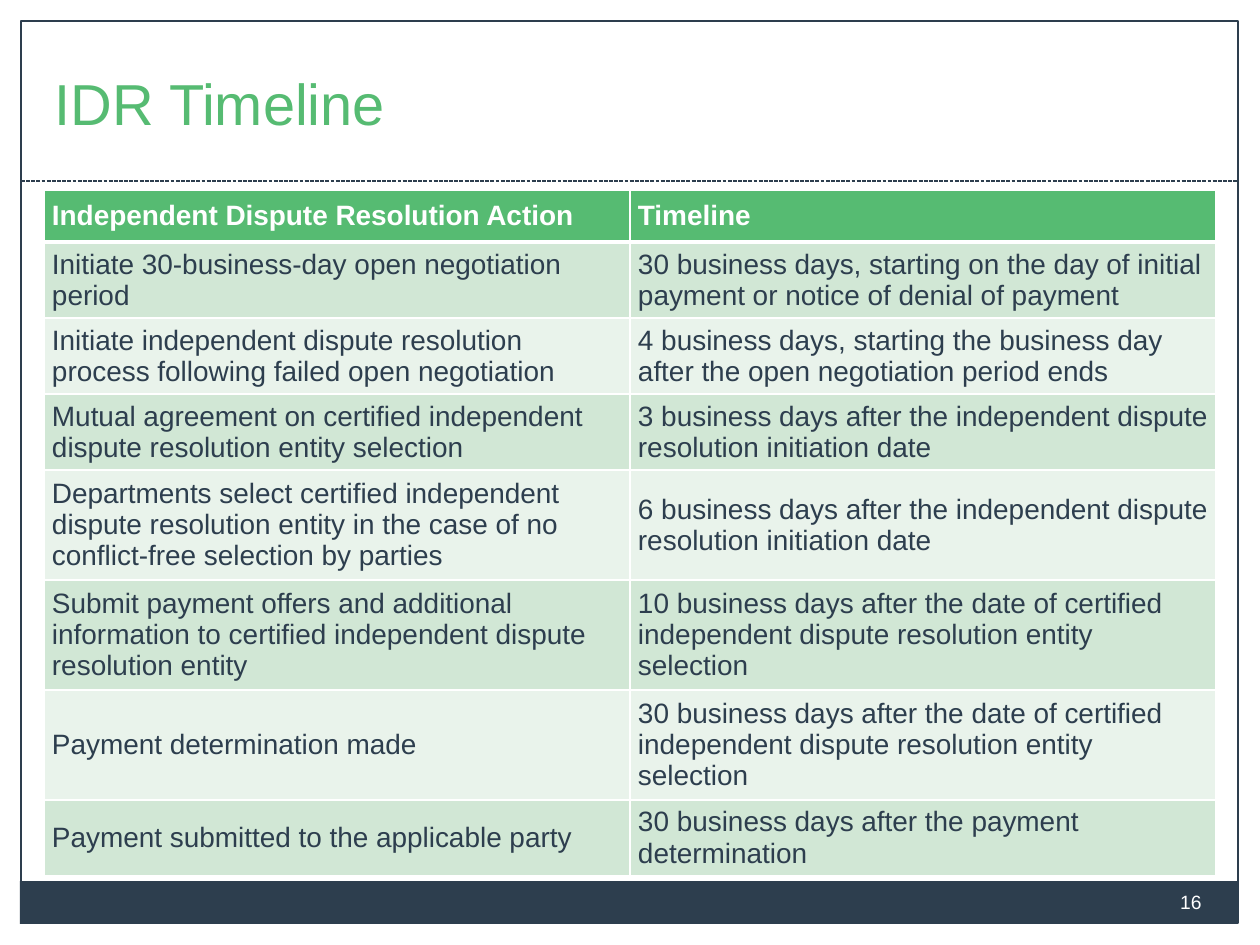
from dataclasses import dataclass

from lxml.etree import SubElement
from pptx import Presentation
from pptx.dml.color import RGBColor
from pptx.enum.dml import MSO_LINE_DASH_STYLE as Dash
from pptx.enum.shapes import MSO_CONNECTOR as Connector, MSO_SHAPE as Preset
from pptx.enum.text import MSO_ANCHOR as Anchor, MSO_AUTO_SIZE as AutoSize, PP_ALIGN as Align
from pptx.oxml import parse_xml
from pptx.oxml.ns import nsdecls, qn
from pptx.util import Pt


@dataclass(frozen=True)
class Theme:
    font: str = "Arial"
    navy: str = "2D3E4E"
    green: str = "56BB72"
    white: str = "FFFFFF"
    bands: tuple = ("D1E7D5", "E9F3EB")
    title_size: int = 33
    table_size: int = 16
    number_size: int = 11
    rule_width: float = 0.75
    border_width: int = 1
    header_border_width: int = 3


THEME = Theme()
EMU_PER_PX = 914400 / 126

ROWS = [
    (52, "Independent Dispute Resolution Action", "Timeline"),
    (76, "Initiate 30-business-day open negotiation period",
     "30 business days, starting on the day of initial payment or notice of denial of payment"),
    (76, "Initiate independent dispute resolution process following failed open negotiation",
     "4 business days, starting the business day after the open negotiation period ends"),
    (76, "Mutual agreement on certified independent dispute resolution entity selection",
     "3 business days after the independent dispute resolution initiation date"),
    (110, "Departments select certified independent dispute resolution entity in the case of no "
     "conflict-free selection by parties",
     "6 business days after the independent dispute resolution initiation date"),
    (110, "Submit payment offers and additional information to certified independent dispute "
     "resolution entity",
     "10 business days after the date of certified independent dispute resolution entity selection"),
    (110, "Payment determination made",
     "30 business days after the date of certified independent dispute resolution entity selection"),
    (76, "Payment submitted to the applicable party",
     "30 business days after the payment determination"),
]


def px(length):
    return round(length * EMU_PER_PX)


def color(value):
    return RGBColor.from_string(value)


def write(text_frame, text, size, text_color, bold=False, align=Align.LEFT):
    text_frame.text = text
    paragraph = text_frame.paragraphs[0]
    paragraph.alignment = align
    font = paragraph.runs[0].font
    font.name, font.size, font.bold = THEME.font, Pt(size), bold
    font.color.rgb = color(text_color)


def add_rectangle(slide, left, top, width, height):
    shape = slide.shapes.add_shape(Preset.RECTANGLE, px(left), px(top), px(width), px(height))
    shape.shadow.inherit = False
    return shape


def add_frame(slide, left, top, width, height):
    bar_height = 43
    bar_top = top + height - bar_height + 1
    bar = add_rectangle(slide, left - 1, bar_top, width, bar_height)
    bar.fill.solid()
    bar.fill.fore_color.rgb = color(THEME.navy)
    bar.line.fill.background()

    frame = add_rectangle(slide, left, top, width, height)
    frame.fill.background()

    rule_y = px(top + 160)
    rule = slide.shapes.add_connector(
        Connector.STRAIGHT, px(left), rule_y, px(left + width), rule_y)
    SubElement(rule.element.spPr, qn("a:effectLst"))
    rule.line.dash_style = Dash.SQUARE_DOT
    for outlined in (frame, rule):
        outlined.line.color.rgb = color(THEME.navy)
        outlined.line.width = Pt(THEME.rule_width)

    number = slide.shapes.add_textbox(
        px(left + width - 108), px(bar_top), px(84), px(bar_height - 1))
    number.text_frame.word_wrap = True
    number.text_frame.vertical_anchor = Anchor.MIDDLE
    write(number.text_frame, "16", THEME.number_size, THEME.white, align=Align.RIGHT)


def add_title(slide, left, top, width, height):
    title = slide.shapes.title
    title.left, title.top, title.width, title.height = map(px, (left, top, width, height))
    title.text_frame.auto_size = AutoSize.NONE
    title.text_frame.vertical_anchor = Anchor.MIDDLE
    write(title.text_frame, "IDR Timeline", THEME.title_size, THEME.green)


def add_borders(cell, top_width, bottom_width):
    properties = cell._tc.get_or_add_tcPr()
    side = THEME.border_width
    widths = {"lnL": side, "lnR": side, "lnT": top_width, "lnB": bottom_width}
    for index, (tag, width) in enumerate(widths.items()):
        properties.insert(index, parse_xml(
            f'<a:{tag} {nsdecls("a")} w="{Pt(width)}"><a:solidFill>'
            f'<a:srgbClr val="{THEME.white}"/></a:solidFill></a:{tag}>'))


def add_timeline_table(slide, left, top, width):
    height = sum(row[0] for row in ROWS)
    table = slide.shapes.add_table(
        len(ROWS), 2, px(left), px(top), px(width), px(height)).table
    table.horz_banding = False
    for column in table.columns:
        column.width = px(width / 2)
    for row_index, (row_height, *texts) in enumerate(ROWS):
        table.rows[row_index].height = px(row_height)
        header = row_index == 0
        fill = THEME.green if header else THEME.bands[(row_index - 1) % 2]
        text_color = THEME.white if header else THEME.navy
        top_width = THEME.header_border_width if row_index == 1 else THEME.border_width
        bottom_width = THEME.header_border_width if header else THEME.border_width
        for column_index, text in enumerate(texts):
            cell = table.cell(row_index, column_index)
            cell.margin_left = cell.margin_right = px(8)
            cell.margin_top = cell.margin_bottom = px(4)
            cell.vertical_anchor = Anchor.MIDDLE
            cell.fill.solid()
            cell.fill.fore_color.rgb = color(fill)
            add_borders(cell, top_width, bottom_width)
            write(cell.text_frame, text, THEME.table_size, text_color, bold=header)


def main():
    presentation = Presentation()
    presentation.slide_width, presentation.slide_height = px(1260), px(945)
    slide = presentation.slides.add_slide(presentation.slide_layouts[5])
    add_frame(slide, 21, 21, 1217, 902)
    add_title(slide, 42, 42, 1176, 120)
    add_timeline_table(slide, 44, 190, 1172)
    presentation.save("out.pptx")


if __name__ == "__main__":
    main()
